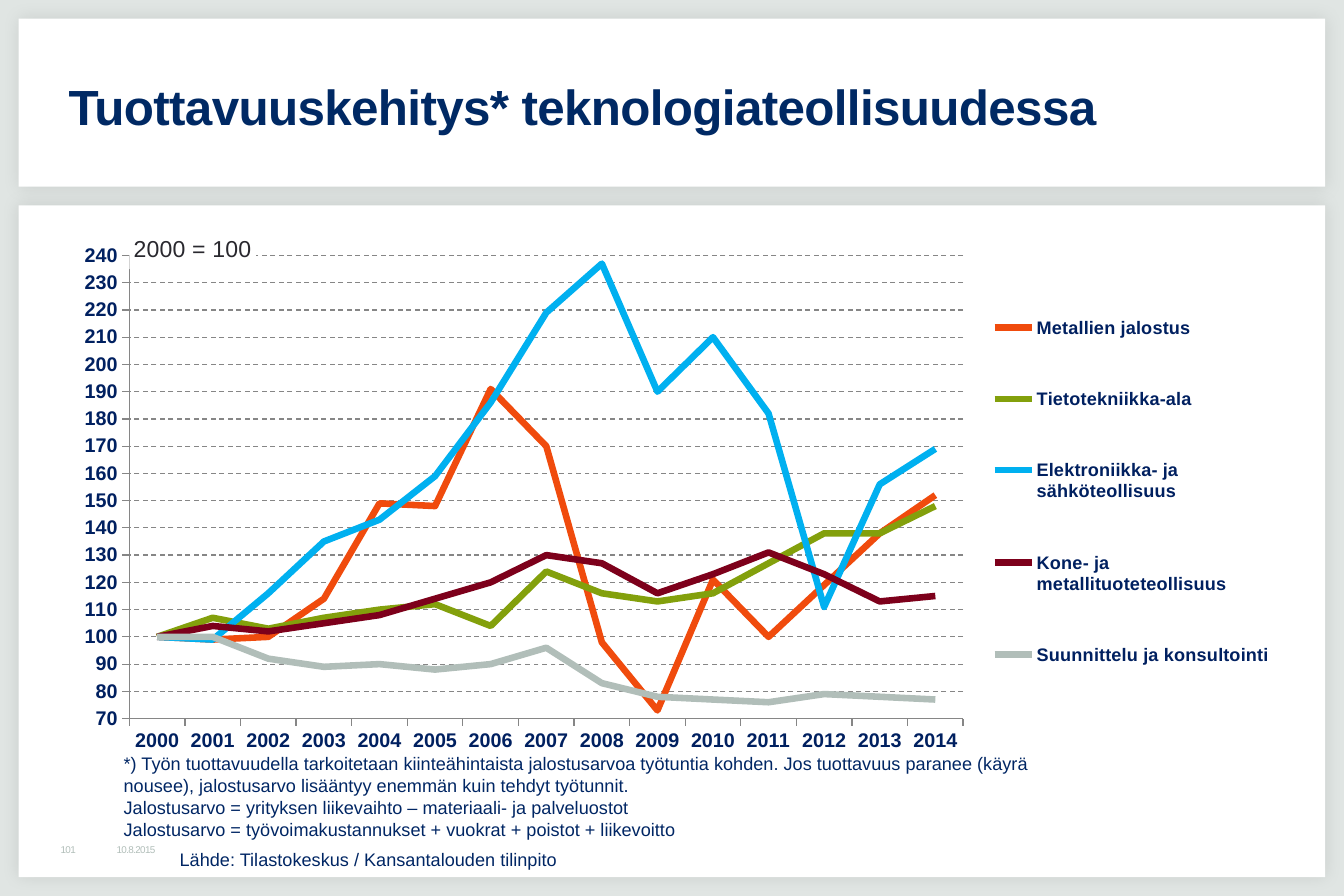
import pptx
import pptx.chart.data
import pptx.dml.color
import pptx.enum.chart
import pptx.enum.dml
import pptx.enum.shapes
import pptx.enum.text
import pptx.oxml
import pptx.oxml.ns
import pptx.util

Cm = pptx.util.Cm
Pt = pptx.util.Pt
NS = pptx.oxml.ns.nsdecls
FONT = "Arial"
NAVY = "002060"
GREY = "B1BEB9"
AXIS = "868686"

YEARS = [str(year) for year in range(2000, 2015)]
SERIES = [
    ("Metallien jalostus", "F04B0D",
     [100, 99, 100, 114, 149, 148, 191, 170, 98, 73, 121, 100, 119, 138, 152]),
    ("Tietotekniikka-ala", "83A00C",
     [100, 107, 103, 107, 110, 112, 104, 124, 116, 113, 116, 127, 138, 138, 148]),
    ("Elektroniikka- ja sähköteollisuus", "00B0F0",
     [100, 99, 116, 135, 143, 159, 186, 219, 237, 190, 210, 182, 111, 156, 169]),
    ("Kone- ja metallituoteteollisuus", "7D001B",
     [100, 104, 102, 105, 108, 114, 120, 130, 127, 116, 123, 131, 123, 113, 115]),
    ("Suunnittelu ja konsultointi", GREY,
     [100, 100, 92, 89, 90, 88, 90, 96, 83, 78, 77, 76, 79, 78, 77]),
]
NOTES = [
    "*) Työn tuottavuudella tarkoitetaan kiinteähintaista jalostusarvoa työtuntia kohden. "
    "Jos tuottavuus paranee (käyrä nousee), jalostusarvo lisääntyy enemmän kuin tehdyt työtunnit.",
    "Jalostusarvo = yrityksen liikevaihto – materiaali- ja palveluostot",
    "Jalostusarvo = työvoimakustannukset + vuokrat + poistot + liikevoitto",
]


def rgb(value):
    return pptx.dml.color.RGBColor.from_string(value)


def set_font(font, size, color, bold=False):
    font.name = FONT
    font.size = Pt(size)
    font.bold = bold
    font.color.rgb = rgb(color)


def place(sp, x, y, w, h):
    sp.left, sp.top, sp.width, sp.height = Cm(x), Cm(y), Cm(w), Cm(h)


def write(sp, lines, size, color, bold=False, insets=(0.25, 0.13, 0.25, 0.13),
          anchor=pptx.enum.text.MSO_ANCHOR.TOP, spacing=None):
    tf = sp.text_frame
    tf.word_wrap = True
    tf.auto_size = pptx.enum.text.MSO_AUTO_SIZE.NONE
    tf.vertical_anchor = anchor
    tf.margin_left, tf.margin_top, tf.margin_right, tf.margin_bottom = map(Cm, insets)
    for i, line in enumerate(lines):
        p = tf.add_paragraph() if i else tf.paragraphs[0]
        p.alignment = pptx.enum.text.PP_ALIGN.LEFT
        r = p.add_run()
        r.text = line
        set_font(r.font, size, color, bold)
        if spacing is not None:
            p.line_spacing = spacing


def tighten(sp):
    for props in sp.element.xpath(".//a:rPr"):
        props.set("spc", "-40")


def add_text(s, box, lines, size, color, **options):
    sp = s.shapes.add_textbox(*map(Cm, box))
    write(sp, lines, size, color, **options)
    return sp


def add_panel(s, box):
    sp = s.shapes.add_shape(pptx.enum.shapes.MSO_SHAPE.RECTANGLE, *map(Cm, box))
    sp.fill.solid()
    sp.fill.fore_color.rgb = rgb("FFFFFF")
    sp.line.fill.background()
    sp.shadow.inherit = False
    effects = sp.element.xpath("./p:spPr/a:effectLst")[0]
    effects.append(pptx.oxml.parse_xml(
        f'<a:outerShdw {NS("a")} blurRad="127000" dist="0" dir="2700000" algn="ctr" rotWithShape="0">'
        '<a:srgbClr val="000000"><a:alpha val="10000"/></a:srgbClr></a:outerShdw>'))
    s.shapes.title.element.addprevious(sp.element)


def manual_layout(x, y, w=None, h=None, target=""):
    inner = f'<c:layoutTarget val="{target}"/>' if target else ""
    sizes = f'<c:w val="{w}"/><c:h val="{h}"/>' if w else ""
    return pptx.oxml.parse_xml(
        f'<c:layout {NS("c")}><c:manualLayout>{inner}<c:xMode val="edge"/><c:yMode val="edge"/>'
        f'<c:x val="{x}"/><c:y val="{y}"/>{sizes}</c:manualLayout></c:layout>')


def style_axis(axis):
    axis.major_tick_mark = pptx.enum.chart.XL_TICK_MARK.OUTSIDE
    axis.minor_tick_mark = pptx.enum.chart.XL_TICK_MARK.NONE
    axis.format.line.color.rgb = rgb(AXIS)
    axis.format.line.width = Pt(0.75)
    set_font(axis.tick_labels.font, 12, NAVY, True)


def add_unit_title(axis):
    title = axis.axis_title
    r = title.text_frame.paragraphs[0].add_run()
    r.text = "2000 = 100"
    set_font(r.font, 14, "29282E")
    title.format.fill.solid()
    title.format.fill.fore_color.rgb = rgb("FFFFFF")
    body = title.element.xpath(".//a:bodyPr")[0]
    body.set("rot", "0")
    body.set("vert", "horz")
    for old in title.element.xpath("./c:layout"):
        title.element.remove(old)
    title.element.xpath("./c:tx")[0].addnext(manual_layout(0.06, 0.01))


def add_line_chart(s, box):
    data = pptx.chart.data.CategoryChartData(number_format="#,##0")
    data.categories = YEARS
    for name, _, values in SERIES:
        data.add_series(name, values)
    chart = s.shapes.add_chart(pptx.enum.chart.XL_CHART_TYPE.LINE, *map(Cm, box), data).chart
    set_font(chart.font, 12, "29282E")
    chart.has_title = False
    chart.plots[0].vary_by_categories = False
    for series, (_, color, _) in zip(chart.plots[0].series, SERIES):
        series.smooth = False
        series.marker.style = pptx.enum.chart.XL_MARKER_STYLE.NONE
        series.format.line.color.rgb = rgb(color)
        series.format.line.width = Pt(4)

    style_axis(chart.category_axis)
    axis = chart.value_axis
    style_axis(axis)
    axis.minimum_scale, axis.maximum_scale, axis.major_unit = 70, 240, 10
    axis.tick_labels.number_format = "#,##0"
    axis.tick_labels.number_format_is_linked = False
    grid = axis.major_gridlines.format.line
    grid.color.rgb = rgb(AXIS)
    grid.width = Pt(0.75)
    grid.dash_style = pptx.enum.dml.MSO_LINE.DASH
    add_unit_title(axis)

    chart.has_legend = True
    legend = chart.legend
    legend.position = pptx.enum.chart.XL_LEGEND_POSITION.RIGHT
    legend.include_in_layout = False
    set_font(legend.font, 11, NAVY, True)
    for old in legend._element.xpath("./c:layout"):
        legend._element.remove(old)
    legend._element.xpath("./c:legendPos")[0].addnext(manual_layout(0.76, 0.08, 0.24, 0.84))

    area = chart.element.xpath(".//c:plotArea")[0]
    for old in area.xpath("./c:layout"):
        area.remove(old)
    area.insert(0, manual_layout(0.06, 0.059, 0.682, 0.867, "inner"))


def add_header(s, box):
    x, y, w, h = box
    add_panel(s, box)
    sp = s.shapes.title
    place(sp, x + 0.97, y + 1.2, w - 1.97, 2.8)
    write(sp, ["Tuottavuuskehitys* teknologiateollisuudessa"], 30, "002964", bold=True,
          insets=(0.1, 0.13, 0.25, 0.13), spacing=0.95)
    tighten(sp)


def add_body(s, box):
    x, y, w, h = box
    add_panel(s, box)
    add_line_chart(s, (x + 0.8, y + 0.4, w - 1.8, 11.45))
    for text, dx, width in (("10.8.2015", 2, 3.6), ("101", 0.8, 1.2)):
        tighten(add_text(s, (x + dx, y + h - 0.8, width, 0.4), [text], 6, GREY,
                         insets=(0.1,) * 4, anchor=pptx.enum.text.MSO_ANCHOR.MIDDLE))
    add_text(s, (x + 2, y + 11.6, 19.96, 2.62), NOTES, 11, "002664")
    add_text(s, (x + 3.2, y + h - 0.74, 9.98, 0.74),
             ["Lähde: Tilastokeskus / Kansantalouden tilinpito"], 11, "002664")


def main():
    prs = pptx.Presentation()
    prs.slide_width, prs.slide_height = Cm(28.8), Cm(19.2)
    s = prs.slides.add_slide(prs.slide_layouts[5])
    s.background.fill.solid()
    s.background.fill.fore_color.rgb = rgb("E0E5E3")
    add_header(s, (0.4, 0.4, 28, 3.6))
    add_body(s, (0.4, 4.4, 28, 14.4))
    prs.save("out.pptx")


if __name__ == "__main__":
    main()
